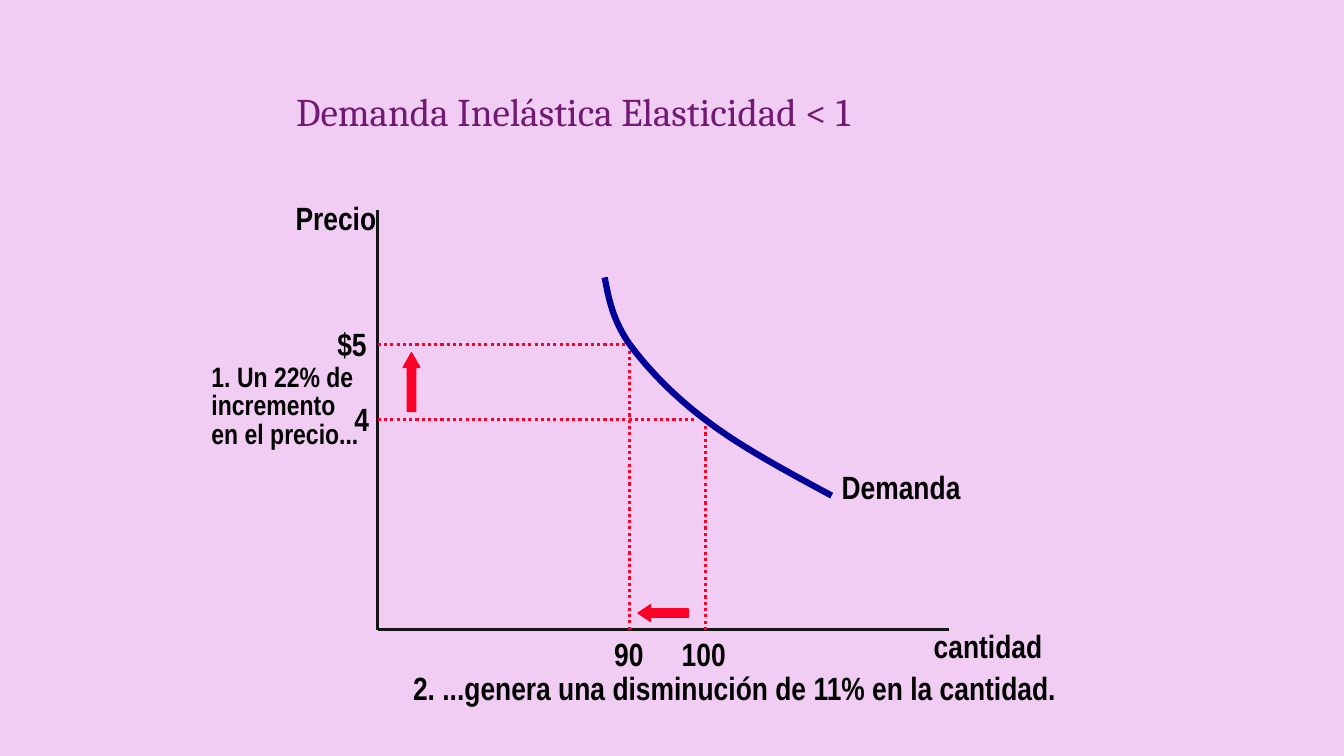
"""Builds a slide on inelastic demand with a price and quantity diagram."""
from pptx import Presentation
from pptx.dml.color import RGBColor
from pptx.enum.dml import MSO_LINE
from pptx.enum.shapes import MSO_CONNECTOR, MSO_SHAPE
from pptx.enum.text import MSO_ANCHOR, MSO_AUTO_SIZE, PP_ALIGN
from pptx.util import Cm, Pt
from lxml.etree import SubElement
from pptx.oxml.ns import qn

PINK = RGBColor(0xF2, 0xCD, 0xF3)
PURPLE = RGBColor(0x71, 0x1A, 0x73)
INK = RGBColor(0x15, 0x15, 0x17)
BLACK = RGBColor(0, 0, 0)
RED = RGBColor(0xFC, 0x01, 0x28)
NAVY = RGBColor(0, 0, 0x99)


def write(frame, text, size=23, font="Arial Narrow", color=BLACK, bold=True,
          wrap=False, spacing=1.0):
    frame.word_wrap = wrap
    for i, row in enumerate(text.split("\n")):
        para = frame.add_paragraph() if i else frame.paragraphs[0]
        para.alignment = PP_ALIGN.LEFT
        para.line_spacing = spacing
        run = para.add_run()
        run.text = row
        run.font.size = Pt(size)
        run.font.name = font
        run.font.bold = bold
        run.font.color.rgb = color


deck = Presentation()
deck.slide_width, deck.slide_height = Cm(33.87), Cm(19.05)
slide = deck.slides.add_slide(deck.slide_layouts[5])
slide.background.fill.solid()
slide.background.fill.fore_color.rgb = PINK
shapes = slide.shapes

title = shapes.title
title.left, title.top = Cm(7.21), Cm(1.27)
title.width, title.height = Cm(21.36), Cm(3.18)
title.text_frame.vertical_anchor = MSO_ANCHOR.MIDDLE
write(title.text_frame, "Demanda Inelástica Elasticidad < 1", size=28,
      font="Cambria", color=PURPLE, bold=False, wrap=True, spacing=0.9)

left, base = 9.52, 15.87
high, low = 8.68, 10.58
less, more = 15.87, 17.78

lines = [
    (left, 5.29, left, base, INK, None),
    (left, base, 23.92, base, INK, None),
    (left, low, 17.57, low, RED, MSO_LINE.ROUND_DOT),
    (left, high, less, high, RED, MSO_LINE.ROUND_DOT),
    (more, low, more, base, RED, MSO_LINE.ROUND_DOT),
    (less, high, less, base, RED, MSO_LINE.ROUND_DOT),
]
for x1, y1, x2, y2, color, dash in lines:
    line = shapes.add_connector(MSO_CONNECTOR.STRAIGHT,
                                Cm(x1), Cm(y1), Cm(x2), Cm(y2))
    line.line.color.rgb = color
    line.line.width = Pt(2.25)
    if dash:
        line.line.dash_style = dash
    SubElement(line._element.spPr, qn("a:effectLst"))

bends = [
    ((15.24, 6.99), (15.34, 7.54), (15.45, 8.08), (less, high)),
    ((less, high), (16.31, 9.27), (16.94, 9.95), (more, low)),
    ((more, low), (18.62, 11.23), (19.79, 11.86), (20.96, 12.49)),
]
steps = 16
points = []
for bend in bends:
    for step in range(1, steps + 1):
        t = step / steps
        parts = ((1 - t) ** 3, 3 * t * (1 - t) ** 2, 3 * t * t * (1 - t), t ** 3)
        points.append([Cm(sum(p * spot[axis] for p, spot in zip(parts, bend)))
                       for axis in (0, 1)])
pen = shapes.build_freeform(Cm(15.24), Cm(6.99))
pen.add_line_segments(points, close=False)
curve = pen.convert_to_shape()
curve.shadow.inherit = False
curve.fill.background()
curve.line.color.rgb = NAVY
curve.line.width = Pt(4.5)

arrows = [
    (MSO_SHAPE.UP_ARROW, 10.16, 8.89, 0.42, 1.48, 0.88),
    (MSO_SHAPE.LEFT_ARROW, 16.08, 15.24, 1.27, 0.42, 0.75),
]
for kind, x, y, wide, tall, head in arrows:
    arrow = shapes.add_shape(kind, Cm(x), Cm(y), Cm(wide), Cm(tall))
    arrow.adjustments[0] = 0.5
    arrow.adjustments[1] = head
    arrow.shadow.inherit = False
    arrow.fill.solid()
    arrow.fill.fore_color.rgb = RED
    arrow.line.color.rgb = RED
    arrow.line.width = Pt(1)

labels = [
    ("Precio", 7.2, 4.87, 2.54),
    ("$5", 8.25, 8.04, 1.27),
    ("4", 8.68, 9.95, 0.89),
    ("Demanda", 20.96, 11.64, 3.51),
    ("90", 15.23, base, 1.27),
    ("100", 16.93, base, 1.65),
    ("cantidad", 23.28, 15.66, 3.25),
    ("2. ...genera una disminución de 11% en la cantidad.", 10.16, 16.72, 16.74),
]
for text, x, y, wide in labels:
    box = shapes.add_textbox(Cm(x), Cm(y), Cm(wide), Cm(1.22))
    write(box.text_frame, text)
    box.text_frame.auto_size = MSO_AUTO_SIZE.SHAPE_TO_FIT_TEXT

cause = shapes.add_textbox(Cm(5.08), Cm(9.06), Cm(4.22), Cm(2.42))
write(cause.text_frame, "1. Un 22% de\nincremento\nen el precio...",
      size=20, spacing=0.85)
cause.text_frame.auto_size = MSO_AUTO_SIZE.SHAPE_TO_FIT_TEXT

deck.save("out.pptx")
